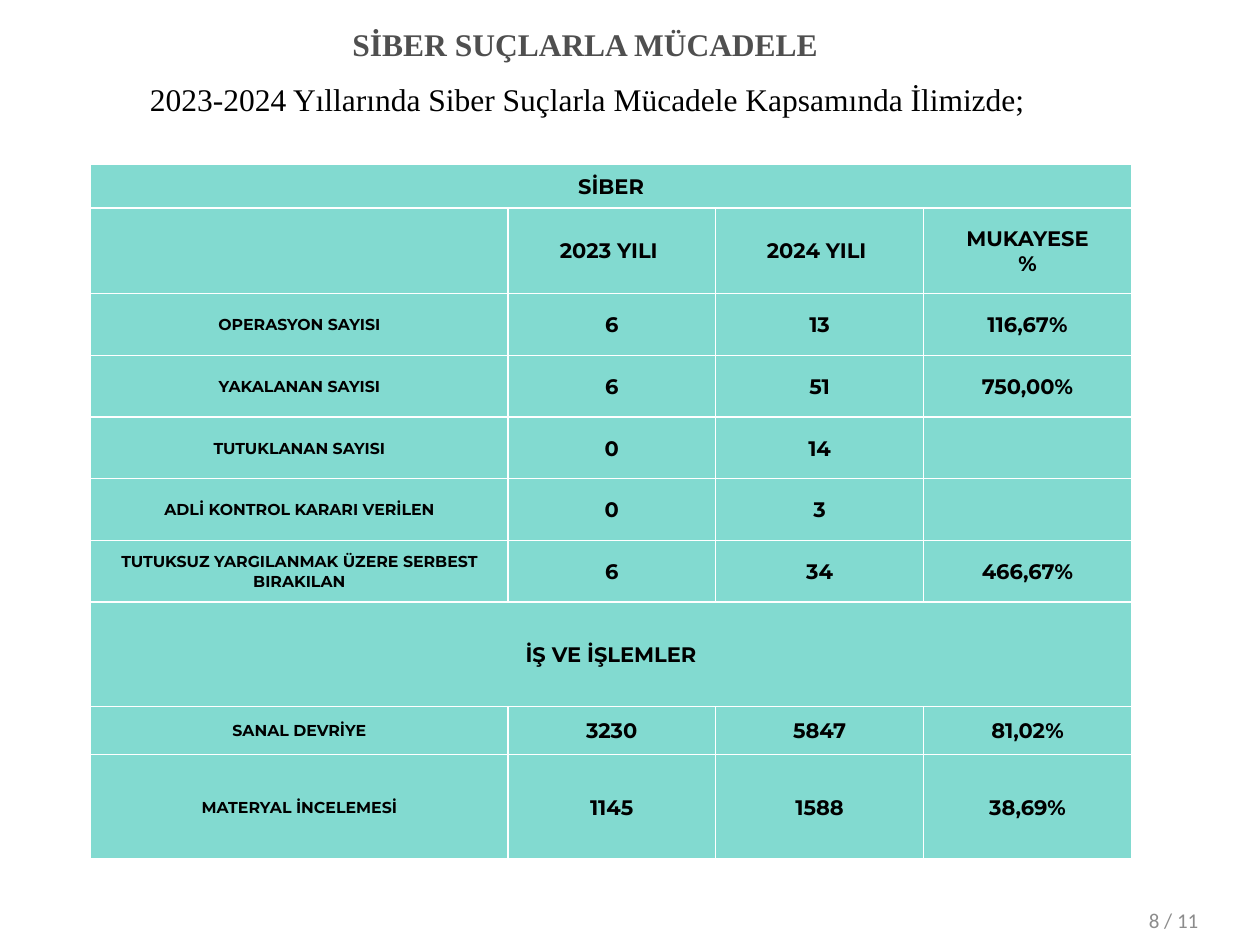
import dataclasses

import pptx
import pptx.dml.color
import pptx.enum.text
import pptx.oxml
import pptx.oxml.ns
import pptx.util
from pptx.util import Inches

ALIGN = pptx.enum.text.PP_ALIGN
ANCHOR = pptx.enum.text.MSO_ANCHOR


@dataclasses.dataclass(frozen=True)
class Theme:
    heading_font: str = "Times New Roman"
    table_font: str = "Montserrat"
    page_font: str = "Calibri"
    heading: str = "4F4F4F"
    ink: str = "000000"
    page: str = "8C8C8C"
    cell: str = "82DAD0"
    border: str = "FFFFFF"
    heading_size: int = 18
    value_size: int = 12
    label_size: int = 9
    border_width: int = 1


THEME = Theme()

# None in place of the values marks a band across the whole table
ROWS = [
    (0.35, "SİBER", None),
    (0.68, "", ["2023 YILI ", "2024 YILI ", "MUKAYESE\v%"]),
    (0.49, "OPERASYON SAYISI", ["6", "13", "116,67%"]),
    (0.49, "YAKALANAN SAYISI", ["6", "51", "750,00%"]),
    (0.49, "TUTUKLANAN SAYISI", ["0", "14", ""]),
    (0.49, "ADLİ KONTROL KARARI VERİLEN", ["0", "3", ""]),
    (0.49, "TUTUKSUZ YARGILANMAK ÜZERE SERBEST BIRAKILAN", ["6", "34", "466,67%"]),
    (0.83, "İŞ VE İŞLEMLER", None),
    (0.38, "SANAL DEVRİYE", ["3230", "5847", "81,02%"]),
    (0.83, "MATERYAL İNCELEMESİ", ["1145", "1588", "38,69%"]),
]
COLUMN_WIDTHS = [3.31, 1.65, 1.65, 1.65]


def apply(target, values):
    for name, value in values.items():
        setattr(target, name, value)


def write(paragraph, text, font, size, color, bold=False, **layout):
    paragraph.text = text
    apply(paragraph, layout)
    for run in paragraph.runs:
        apply(run.font, {"name": font, "size": pptx.util.Pt(size), "bold": bold})
        run.font.color.rgb = pptx.dml.color.RGBColor.from_string(color)


def add_heading(slide):
    heading = slide.shapes.title
    apply(heading, {"left": Inches(0.59), "top": Inches(0.13),
                    "width": Inches(8.11), "height": Inches(0.86)})
    frame = heading.text_frame
    apply(frame, {"word_wrap": True, "vertical_anchor": ANCHOR.TOP,
                  "auto_size": pptx.enum.text.MSO_AUTO_SIZE.NONE})
    spacing = {"line_spacing": 1.07, "space_before": pptx.util.Pt(0)}
    write(frame.paragraphs[0], "SİBER SUÇLARLA MÜCADELE", THEME.heading_font,
          THEME.heading_size, THEME.heading, bold=True,
          alignment=ALIGN.CENTER, space_after=pptx.util.Pt(8), **spacing)
    subtitle = frame.add_paragraph()
    write(subtitle, "2023-2024 Yıllarında Siber Suçlarla Mücadele Kapsamında İlimizde;",
          THEME.heading_font, THEME.heading_size, THEME.ink,
          alignment=ALIGN.JUSTIFY, space_after=pptx.util.Pt(11.5), **spacing)
    indents = subtitle._p.get_or_add_pPr()
    indents.set("marL", str(Inches(0.07)))
    indents.set("indent", str(Inches(0.43)))


def style_cell(cell):
    apply(cell, {"margin_left": Inches(0.01), "margin_right": Inches(0.01),
                 "margin_top": Inches(0.01), "margin_bottom": 0,
                 "vertical_anchor": ANCHOR.MIDDLE})
    properties = cell._tc.get_or_add_tcPr()
    for position, side in enumerate(("lnL", "lnR", "lnT", "lnB")):
        properties.insert(position, pptx.oxml.parse_xml(
            f'<a:{side} {pptx.oxml.ns.nsdecls("a")} w="{pptx.util.Pt(THEME.border_width)}">'
            f'<a:solidFill><a:srgbClr val="{THEME.border}"/></a:solidFill></a:{side}>'))
    cell.fill.solid()
    cell.fill.fore_color.rgb = pptx.dml.color.RGBColor.from_string(THEME.cell)


def add_crime_table(slide):
    table = slide.shapes.add_table(
        len(ROWS), len(COLUMN_WIDTHS), Inches(0.72), Inches(1.3),
        Inches(sum(COLUMN_WIDTHS)), Inches(sum(row[0] for row in ROWS))).table
    apply(table, {"first_row": False, "horz_banding": False})
    for column, width in zip(table.columns, COLUMN_WIDTHS):
        column.width = Inches(width)
    for index, (height, label, values) in enumerate(ROWS):
        table.rows[index].height = Inches(height)
        cells = list(table.rows[index].cells)
        for cell in cells:
            style_cell(cell)
        if values is None:
            cells[0].merge(cells[-1])
        for column, text in enumerate([label] + (values or [])):
            is_label = column == 0 and values is not None
            size = THEME.label_size if is_label else THEME.value_size
            write(cells[column].text_frame.paragraphs[0], text, THEME.table_font,
                  size, THEME.ink, bold=True, alignment=ALIGN.CENTER)


def add_page_number(slide):
    page = slide.shapes.add_textbox(Inches(9.02), Inches(7.15), Inches(0.9), Inches(0.3))
    page.text_frame.word_wrap = True
    write(page.text_frame.paragraphs[0], "8 / 11", THEME.page_font,
          THEME.value_size, THEME.page)


def main():
    presentation = pptx.Presentation()
    apply(presentation, {"slide_width": Inches(10), "slide_height": Inches(7.5)})
    slide = presentation.slides.add_slide(presentation.slide_layouts[5])
    add_page_number(slide)
    add_crime_table(slide)
    add_heading(slide)
    presentation.save("out.pptx")


if __name__ == "__main__":
    main()
